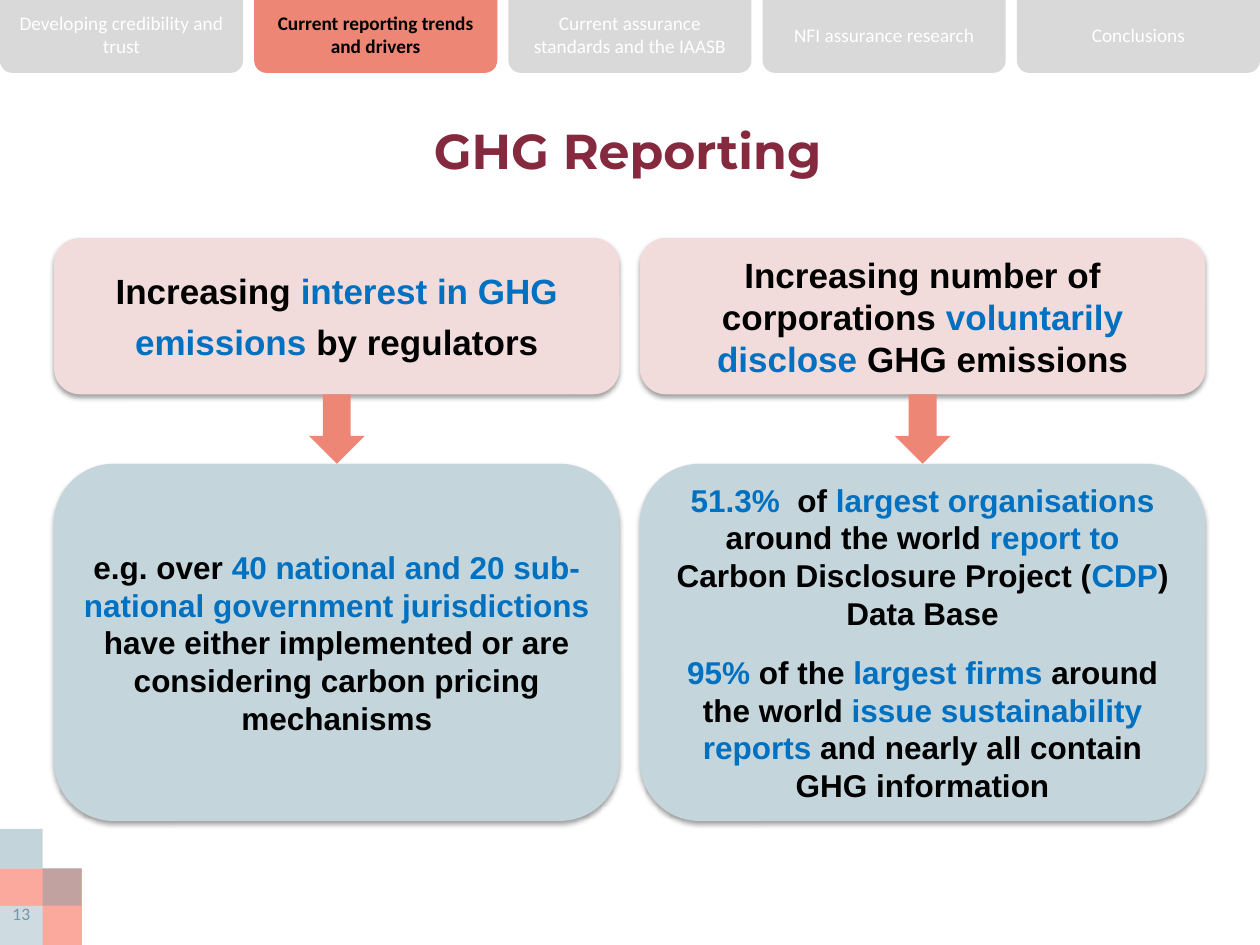
from lxml import etree
from pptx import Presentation
from pptx.dml.color import RGBColor
from pptx.enum.shapes import MSO_SHAPE
from pptx.enum.text import MSO_ANCHOR, PP_ALIGN
from pptx.oxml.ns import qn
from pptx.util import Cm, Pt

RECT = MSO_SHAPE.RECTANGLE
ROUNDED = MSO_SHAPE.ROUNDED_RECTANGLE
TAB = MSO_SHAPE.ROUND_2_SAME_RECTANGLE
DOWN_ARROW = MSO_SHAPE.DOWN_ARROW
CENTER = PP_ALIGN.CENTER
MIDDLE, TOP = MSO_ANCHOR.MIDDLE, MSO_ANCHOR.TOP

COLORS = {
    "black": "000000", "white": "FFFFFF", "highlight": "0070C0",
    "title": "85293F", "tab": "D9D9D9", "accent": "ED8674",
    "cause": "F2DCDB", "effect": "C5D5DC",
    "coral": "FAA99C", "pale": "CEDBE0", "slate": "7198A9",
}

TABS = [
    "Developing credibility and trust",
    "Current reporting trends and drivers",
    "Current assurance standards and the IAASB",
    "NFI assurance research",
    "Conclusions",
]
ACTIVE_TAB = 1

# Text between bars is highlighted.
REGULATORS = ["Increasing |interest in GHG", "|emissions |by regulators"]
JURISDICTIONS = [
    "e.g. over |40 national and 20 sub-national government jurisdictions "
    "|have either implemented or are considering carbon pricing mechanisms",
]
CORPORATIONS = [
    "Increasing number of corporations |voluntarily disclose| GHG emissions",
]
DISCLOSURES = [
    "|51.3%  |of |largest organisations |around the world |report to "
    "|Carbon Disclosure Project (|CDP|) Data Base",
    "|95% |of the |largest firms |around the world "
    "|issue sustainability reports| and nearly all contain GHG information",
]


def rgb(name):
    return RGBColor.from_string(COLORS[name])


def add_block(page, kind, left, top, width, height, color, alpha=None):
    """Add a flat, borderless preset shape; lengths are in cm."""
    shape = page.shapes.add_shape(kind, Cm(left), Cm(top), Cm(width), Cm(height))
    shape.shadow.inherit = False
    shape.fill.solid()
    shape.fill.fore_color.rgb = rgb(color)
    shape.line.fill.background()
    if alpha:
        tint = shape._element.spPr.find(".//" + qn("a:srgbClr"))
        etree.SubElement(tint, qn("a:alpha"), val=str(alpha * 1000))
    return shape


def add_soft_shadow(shape):
    effects = shape._element.spPr.find(qn("a:effectLst"))
    shadow = etree.SubElement(effects, qn("a:outerShdw"), blurRad=str(Pt(3.1)),
                              dist=str(Pt(1.6)), dir="5400000", rotWithShape="0")
    tint = etree.SubElement(shadow, qn("a:srgbClr"), val=COLORS["black"])
    etree.SubElement(tint, qn("a:alpha"), val="38000")


def write(shape, paragraphs, size, font="Arial", color="black", bold=False,
          anchor=MIDDLE, before=0, after=0):
    """Fill a shape with centred paragraphs, highlighting text between bars."""
    frame = shape.text_frame
    frame.word_wrap = True
    frame.vertical_anchor = anchor
    for index, text in enumerate(paragraphs):
        para = frame.add_paragraph() if index else frame.paragraphs[0]
        para.alignment = CENTER
        para.space_after = Pt(after)
        if index:
            para.space_before = Pt(before)
        for position, part in enumerate(text.split("|")):
            if part:
                span = para.add_run()
                span.text = part
                span.font.name = font
                span.font.size = Pt(size)
                span.font.bold = bold
                span.font.color.rgb = rgb("highlight" if position % 2 else color)


def add_text(page, left, top, width, height, text, **style):
    box = page.shapes.add_textbox(Cm(left), Cm(top), Cm(width), Cm(height))
    box.text_frame.margin_left = box.text_frame.margin_right = 0
    write(box, [text], **style)


def add_corner(page, left, top):
    """Draw the corner tiles and the page number."""
    add_block(page, RECT, left, top + 0.8, 1.65, 1.54, "coral")
    add_block(page, RECT, left, top + 1.55, 0.86, 0.79, "pale")
    add_block(page, RECT, left, top, 0.86, 0.8, "slate", alpha=41)
    add_block(page, RECT, left + 0.86, top + 0.79, 0.78, 0.76, "slate", alpha=41)
    add_text(page, left, top + 1.37, 0.86, 0.97, "13", size=10,
             font="Calibri", color="slate", anchor=TOP)


def add_tabs(page, left, top, width, height):
    tab_width = 4.9
    step = (width - tab_width) / (len(TABS) - 1)
    for index, label in enumerate(TABS):
        active = index == ACTIVE_TAB
        tab = add_block(page, TAB, left + index * step, top, tab_width, height,
                        "accent" if active else "tab")
        tab.adjustments[0], tab.adjustments[1] = 0, 0.17
        write(tab, [label], size=11, font="Calibri", bold=active,
              color="black" if active else "white")


def add_column(page, left, top, width, height, cause, effect, **spacing):
    """Draw a cause box with an arrow down to its effect box."""
    cause_height, effect_height = 3.15, 7.2
    arrow_width, arrow_height = 1.12, 1.4
    gap = height - cause_height - effect_height
    boxes = [
        (top, cause_height, "cause", cause, 20, spacing),
        (top + height - effect_height, effect_height, "effect", effect, 18,
         {"after": 12}),
    ]
    for box_top, box_height, color, text, size, gaps in boxes:
        box = add_block(page, ROUNDED, left, box_top, width, box_height, color)
        add_soft_shadow(box)
        write(box, text, size, bold=True, **gaps)
    add_block(page, DOWN_ARROW, left + (width - arrow_width) / 2,
              top + cause_height + (gap - arrow_height) / 2,
              arrow_width, arrow_height, "accent")


def main():
    deck = Presentation()
    deck.slide_width, deck.slide_height = Cm(25.4), Cm(19.05)
    page = deck.slides.add_slide(deck.slide_layouts[6])
    add_corner(page, 0, 16.71)
    add_text(page, 0.3, 1.75, 24.71, 2.54, "GHG Reporting", size=28,
             font="Montserrat", color="title", bold=True)
    add_tabs(page, 0, 0, 25.4, 1.47)
    add_column(page, 1.09, 4.8, 11.4, 11.75, REGULATORS, JURISDICTIONS, before=5)
    add_column(page, 12.9, 4.8, 11.4, 11.75, CORPORATIONS, DISCLOSURES, after=12)
    deck.save("out.pptx")


if __name__ == "__main__":
    main()
